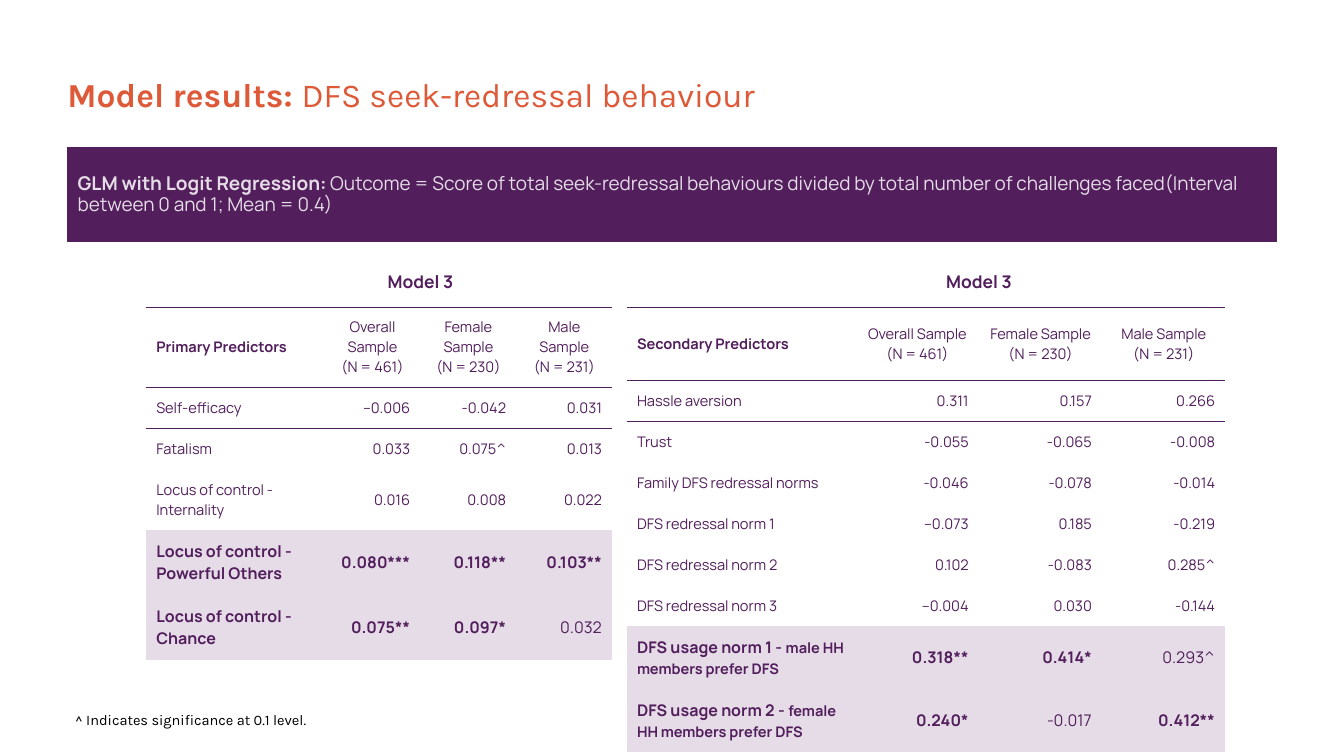
"""Build a slide with two regression tables for DFS seek-redressal behaviour."""
from lxml.etree import SubElement
from pptx import Presentation
from pptx.dml.color import RGBColor
from pptx.enum.shapes import MSO_SHAPE as Shape
from pptx.enum.text import MSO_ANCHOR as Anchor, MSO_AUTO_SIZE as AutoSize, PP_ALIGN as Align
from pptx.oxml.ns import qn
from pptx.util import Cm, Pt

COLORS = {"purple": "521F5C", "lilac": "E6DCE8", "orange": "DD5938", "black": "000000"}
NO_GRID_STYLE = "{2D5ABB26-0587-4C30-8999-92F81FD0307C}"
INSET = 0.25

TITLE = [("Model results: ", {"bold": True}), ("DFS seek-redressal behaviour", {})]
BANNER = [
    ("GLM with Logit Regression:", {"bold": True}),
    (" Outcome = Score of total seek-redressal behaviours divided by total number of "
     "challenges faced(Interval between 0 and 1; Mean = 0.4)", {}),
]
FOOTNOTE = "^ Indicates significance at 0.1 level."
MODEL = "Model 3"
SAMPLES = [("Overall Sample", "(N = 461)"), ("Female Sample", "(N = 230)"),
           ("Male Sample", "(N = 231)")]

PRIMARY = {
    "heading": "Primary Predictors",
    "left": 3.53,
    "columns": (4.32, 2.32),
    "rows": [1.21, 1.93, 0.99, 0.99, 1.48, 1.57, 1.57],
    "plain": [
        ("Self-efficacy", "--0.006", "-0.042", "0.031"),
        ("Fatalism", "0.033", "0.075^", "0.013"),
        ("Locus of control - Internality", "0.016", "0.008", "0.022"),
    ],
    "highlighted": [
        (("Locus of control - Powerful Others", ""), "0.080***", "0.118**", "0.103**"),
        (("Locus of control - Chance", ""), "0.075**", "0.097*", "0.032"),
    ],
}
SECONDARY = {
    "heading": "Secondary Predictors",
    "left": 15.16,
    "columns": (5.54, 2.98),
    "rows": [1.21, 1.78] + [0.99] * 6 + [1.52] * 2,
    "plain": [
        ("Hassle aversion", "0.311", "0.157", "0.266"),
        ("Trust", "-0.055", "-0.065", "-0.008"),
        ("Family DFS redressal norms", "-0.046", "-0.078", "-0.014"),
        ("DFS redressal norm 1", "--0.073", "0.185", "-0.219"),
        ("DFS redressal norm 2", "0.102", "-0.083", "0.285^"),
        ("DFS redressal norm 3", "--0.004", "0.030", "-0.144"),
    ],
    "highlighted": [
        (("DFS usage norm 1 - ", "male HH members prefer DFS"), "0.318**", "0.414*", "0.293^"),
        (("DFS usage norm 2 - ", "female HH members prefer DFS"), "0.240*", "-0.017", "0.412**"),
    ],
}
RULED_EDGES = {0: ["a:lnB"], 1: ["a:lnT", "a:lnB"], 2: ["a:lnT"]}


def color(name):
    return RGBColor.from_string(COLORS[name])


def write(frame, *paragraphs, size=10, bold=False, ink="purple", font="Manrope",
          align=Align.LEFT, spacing=None):
    for index, content in enumerate(paragraphs):
        paragraph = frame.paragraphs[0] if index == 0 else frame.add_paragraph()
        paragraph.alignment = align
        if spacing:
            paragraph.line_spacing = spacing
        runs = [(content, {})] if isinstance(content, str) else content
        for text, changes in runs:
            run = paragraph.add_run()
            run.text = text
            run.font.name = font
            run.font.size = Pt(changes.get("size", size))
            run.font.bold = changes.get("bold", bold)
            run.font.color.rgb = color(ink)


def set_insets(target, inset):
    target.margin_left = target.margin_right = Cm(inset)
    target.margin_top = target.margin_bottom = Cm(inset)


def rule_cell(cell, edges):
    properties = cell._tc.get_or_add_tcPr()
    for position, edge in enumerate(edges):
        line = SubElement(properties, qn(edge), w=str(Pt(0.75)))
        fill = SubElement(line, qn("a:solidFill"))
        SubElement(fill, qn("a:srgbClr"), val=COLORS["purple"])
        properties.insert(position, line)


def add_results(slide, data):
    label_width, value_width = data["columns"]
    widths = [label_width] + [value_width] * len(SAMPLES)
    heights = data["rows"]
    table = slide.shapes.add_table(
        len(heights), len(widths), Cm(data["left"]), Cm(6.22),
        Cm(sum(widths)), Cm(sum(heights))).table
    table._tbl.tblPr.find(qn("a:tableStyleId")).text = NO_GRID_STYLE
    table.first_row = table.horz_banding = False
    for column, width in zip(table.columns, widths):
        column.width = Cm(width)
    for row, height in zip(table.rows, heights):
        row.height = Cm(height)

    first_highlight = 2 + len(data["plain"])
    for row_index, row in enumerate(table.rows):
        for cell in row.cells:
            set_insets(cell, INSET if row_index else 0)
            cell.vertical_anchor = Anchor.MIDDLE
            if row_index >= first_highlight:
                cell.fill.solid()
                cell.fill.fore_color.rgb = color("lilac")
            else:
                cell.fill.background()
            rule_cell(cell, RULED_EDGES.get(row_index, []))

    table.cell(0, 1).merge(table.cell(0, 2))
    write(table.cell(0, 1).text_frame, MODEL, size=12, bold=True, align=Align.CENTER)
    write(table.cell(1, 0).text_frame, data["heading"], bold=True)
    for column_index, sample in enumerate(SAMPLES, 1):
        write(table.cell(1, column_index).text_frame, *sample, align=Align.CENTER)

    for row_index, (label, *values) in enumerate(data["plain"] + data["highlighted"], 2):
        highlighted = row_index >= first_highlight
        size = 11 if highlighted else 10
        if highlighted:
            name, detail = label
            label = [(name, {"size": size})] + ([(detail, {})] if detail else [])
        write(table.cell(row_index, 0).text_frame, label, bold=highlighted)
        for column_index, value in enumerate(values, 1):
            write(table.cell(row_index, column_index).text_frame, value,
                  size=size, bold="*" in value, align=Align.RIGHT)


def main():
    presentation = Presentation()
    presentation.slide_width, presentation.slide_height = Cm(32.51), Cm(18.29)
    slide = presentation.slides.add_slide(presentation.slide_layouts[5])

    title = slide.shapes.title
    title.left, title.top, title.width, title.height = Cm(1.63), Cm(0.74), Cm(29.26), Cm(3.05)
    title.text_frame.auto_size = AutoSize.NONE
    title.text_frame.vertical_anchor = Anchor.MIDDLE
    set_insets(title.text_frame, 0)
    write(title.text_frame, TITLE, size=23, ink="orange", font="Karla")

    banner = slide.shapes.add_shape(Shape.RECTANGLE, Cm(1.63), Cm(3.58), Cm(29.26), Cm(2.26))
    banner.shadow.inherit = False
    banner.fill.solid()
    banner.fill.fore_color.rgb = color("purple")
    banner.line.color.rgb = color("purple")
    banner.line.width = Pt(0.75)
    banner.text_frame.word_wrap = True
    banner.text_frame.vertical_anchor = Anchor.MIDDLE
    set_insets(banner.text_frame, INSET)
    write(banner.text_frame, BANNER, size=13, ink="lilac", spacing=0.9)

    for data in (PRIMARY, SECONDARY):
        add_results(slide, data)

    footnote = slide.shapes.add_textbox(Cm(1.57), Cm(16.99), Cm(17.07), Cm(0.94))
    footnote.text_frame.word_wrap = True
    set_insets(footnote.text_frame, INSET)
    write(footnote.text_frame, FOOTNOTE, ink="black", font="Karla")

    presentation.save("out.pptx")


if __name__ == "__main__":
    main()
